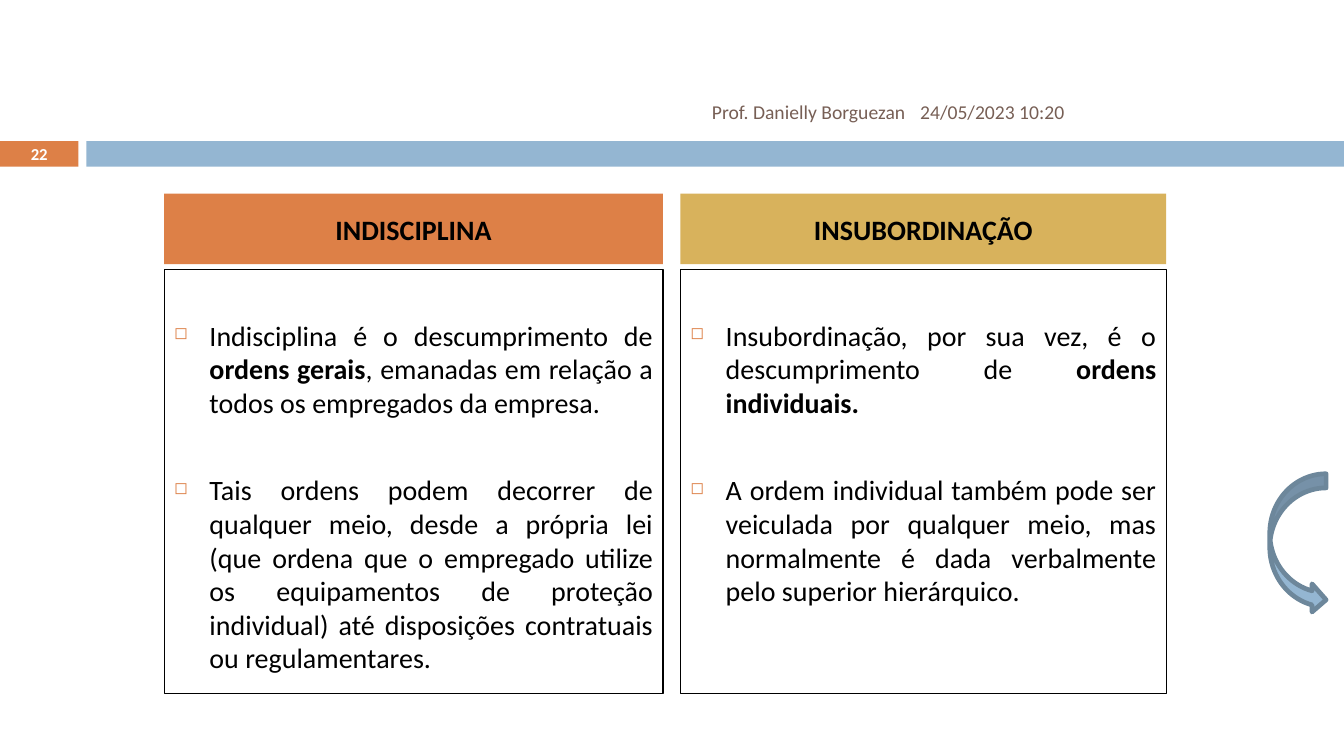
from pptx import Presentation
from pptx.dml.color import RGBColor as Color
from pptx.enum.shapes import MSO_SHAPE as Shape
from pptx.enum.text import MSO_ANCHOR as Anchor, PP_ALIGN as Align
from pptx.oxml.ns import qn
from pptx.util import Cm, Pt
from lxml.etree import SubElement

COLUMNS = [
    {
        "title": "INDISCIPLINA", "fill": "orange", "left": 4.14, "width": 12.57,
        "points": [
            [("Indisciplina é o descumprimento de ", False), ("ordens gerais", True),
             (", emanadas em relação a todos os empregados da empresa.", False)],
            [("Tais ordens podem decorrer de qualquer meio, desde a própria lei (que ordena "
              "que o empregado utilize os equipamentos de proteção individual) até "
              "disposições contratuais ou regulamentares.", False)],
        ],
    },
    {
        "title": "INSUBORDINAÇÃO", "fill": "gold", "left": 17.15, "width": 12.24,
        "points": [
            [("Insubordinação, por sua vez, é o descumprimento de ", False),
             ("ordens individuais.", True)],
            [("A ordem individual também pode ser veiculada por qualquer meio, mas "
              "normalmente é dada verbalmente pelo superior hierárquico.", False)],
        ],
    },
]
AUTHOR = "Prof. Danielly Borguezan"
DATE = "24/05/2023 10:20"
NUMBER = "22"

THEME = {
    "font": "Calibri",
    "colors": {
        "orange": "DD8047", "blue": "94B6D2", "gold": "D8B25C", "brown": "775F55",
        "slate": "6D879B", "black": "000000", "white": "FFFFFF",
    },
    "sizes": {"body": 20, "footer": 14, "number": 12},
}
BAR_TOP, BAR_HEIGHT = 3.56, 0.64
NUMBER_WIDTH, BAR_LEFT = 1.98, 2.18
HEADING_TOP, HEADING_HEIGHT = 4.88, 1.78
BODY_TOP, BODY_HEIGHT, BODY_INSET = 6.78, 10.69, 1.24
FOOTER_TOP, FOOTER_HEIGHT = 2.31, 1.02
POINT_GAP = 38.4
INDENT = Cm(0.89)


def color(name):
    return Color.from_string(THEME["colors"][name])


def add_box(page, place, fill=None, line=None, weight=0.75, kind=Shape.RECTANGLE):
    box = page.shapes.add_shape(kind, *map(Cm, place))
    box.shadow.inherit = False
    if fill:
        box.fill.solid()
        box.fill.fore_color.rgb = color(fill)
    else:
        box.fill.background()
    if line:
        box.line.color.rgb = color(line)
        box.line.width = Pt(weight)
    else:
        box.line.fill.background()
    return box


def add_span(para, text, ink, size, bold=False):
    span = para.add_run()
    span.text = text
    formats = {"name": THEME["font"], "size": Pt(THEME["sizes"][size]), "bold": bold}
    for name, value in formats.items():
        setattr(span.font, name, value)
    span.font.color.rgb = color(ink)


def write_line(box, text, ink, size, align, bold=False):
    frame = box.text_frame
    frame.word_wrap = True
    frame.vertical_anchor = Anchor.MIDDLE
    para = frame.paragraphs[0]
    para.alignment = align
    add_span(para, text, ink, size, bold)


def add_bullet(para):
    props = para._p.get_or_add_pPr()
    props.set("marL", str(INDENT))
    props.set("indent", str(-INDENT))
    tint = SubElement(props, qn("a:buClr"))
    SubElement(tint, qn("a:srgbClr"), val=THEME["colors"]["orange"])
    SubElement(props, qn("a:buSzPct"), val="60000")
    SubElement(props, qn("a:buChar"), char="◻")


def write_points(box, points):
    frame = box.text_frame
    frame.word_wrap = True
    frame.vertical_anchor = Anchor.TOP
    frame.margin_top = Cm(BODY_INSET)
    for index, spans in enumerate(points):
        para = frame.add_paragraph() if index else frame.paragraphs[0]
        add_bullet(para)
        para.alignment = Align.JUSTIFY
        if index:
            para.space_before = Pt(POINT_GAP)
        for text, bold in spans:
            add_span(para, text, "black", "body", bold)


def build():
    deck = Presentation()
    deck.slide_width, deck.slide_height = Cm(33.87), Cm(19.05)
    page = deck.slides.add_slide(deck.slide_layouts[6])

    number = add_box(page, (0, BAR_TOP, NUMBER_WIDTH, BAR_HEIGHT), "orange")
    number.text_frame.margin_top = number.text_frame.margin_bottom = 0
    write_line(number, NUMBER, "white", "number", Align.CENTER, True)
    add_box(page, (BAR_LEFT, BAR_TOP, 33.87 - BAR_LEFT, BAR_HEIGHT), "blue")

    for column in COLUMNS:
        left, width = column["left"], column["width"]
        body = add_box(page, (left, BODY_TOP, width, BODY_HEIGHT), line="black")
        write_points(body, column["points"])
        heading = add_box(page, (left, HEADING_TOP, width, HEADING_HEIGHT), column["fill"])
        write_line(heading, column["title"], "black", "body", Align.CENTER, True)

    for text, left, width, align in [
        (DATE, 22.94, 7.42, Align.LEFT),
        (AUTHOR, 8.13, 14.94, Align.RIGHT),
    ]:
        place = (left, FOOTER_TOP, width, FOOTER_HEIGHT)
        footer = page.shapes.add_textbox(*map(Cm, place))
        write_line(footer, text, "brown", "footer", align)

    add_box(page, (32, 11.94, 1.42, 3.53), "blue", "slate", 3.35, Shape.CURVED_RIGHT_ARROW)
    deck.save("out.pptx")


if __name__ == "__main__":
    build()
